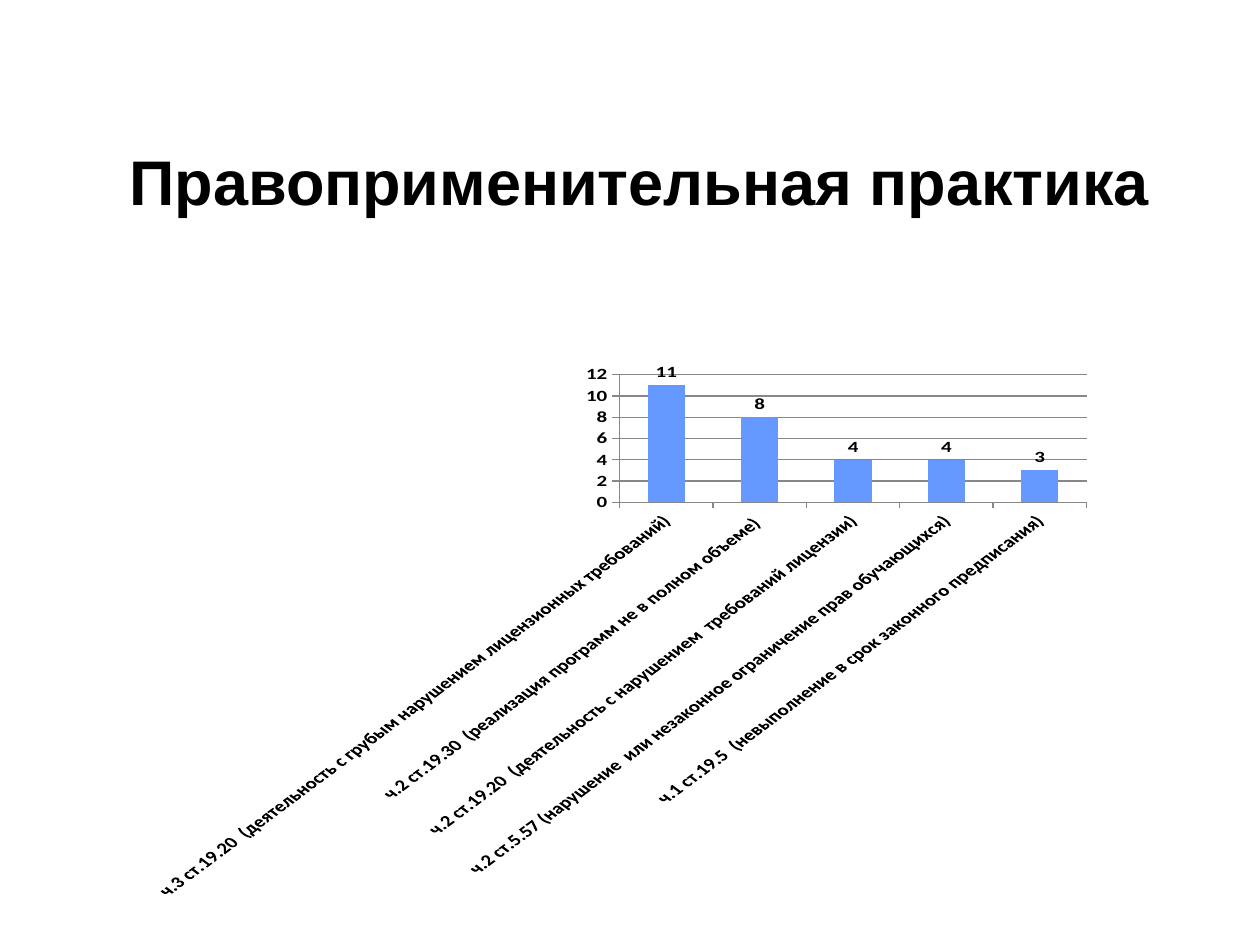
from pptx import Presentation
from pptx.chart.data import CategoryChartData
from pptx.dml.color import RGBColor
from pptx.enum.chart import XL_CHART_TYPE, XL_LABEL_POSITION, XL_TICK_MARK
from pptx.enum.text import MSO_ANCHOR, MSO_AUTO_SIZE, PP_ALIGN
from pptx.oxml.ns import qn
from pptx.util import Emu, Pt

PX = 914400 // 126
COLUMNS = XL_CHART_TYPE.COLUMN_CLUSTERED
OUTSIDE_END = XL_LABEL_POSITION.OUTSIDE_END
TICK_OUT, TICK_NONE = XL_TICK_MARK.OUTSIDE, XL_TICK_MARK.NONE
MIDDLE, CENTER, NO_FIT = MSO_ANCHOR.MIDDLE, PP_ALIGN.CENTER, MSO_AUTO_SIZE.NONE
BLACK, GRAY, BLUE = "000000", "878787", "6699FF"

VIOLATIONS = {
    "ч.3 ст.19.20  (деятельность с грубым нарушением лицензионных требований)": 11,
    "ч.2 ст.19.30  (реализация программ не в полном объеме) ": 8,
    "ч.2 ст.19.20  (деятельность с нарушением  требований лицензии)": 4,
    "ч.2 ст.5.57 (нарушение  или незаконное ограничение прав обучающихся)": 4,
    "ч.1 ст.19.5  (невыполнение в срок законного предписания)": 3,
}


def px(n):
    return Emu(n * PX)


def rgb(color):
    return RGBColor.from_string(color)


class Deck:
    """Holds the presentation, its current slide and the shared style."""

    def __init__(self):
        self.prs = Presentation()
        self.prs.slide_width, self.prs.slide_height = px(1260), px(945)
        self.s = self.prs.slides.add_slide(self.prs.slide_layouts[5])

    def font(self, f, name, size, bold=False):
        f.name, f.size, f.bold = name, Pt(size), bold
        f.color.rgb = rgb(BLACK)

    def title(self, text, x, y, w, h, bottom):
        sp = self.s.shapes.title
        sp.left, sp.top, sp.width, sp.height = map(px, (x, y, w, h))
        tf = sp.text_frame
        tf.text = text
        tf.word_wrap, tf.auto_size = True, NO_FIT
        tf.vertical_anchor, tf.margin_bottom = MIDDLE, px(bottom)
        p = tf.paragraphs[0]
        p.alignment = CENTER
        self.font(p.font, "Arial", 36, True)

    def axis(self, axis):
        axis.major_tick_mark, axis.minor_tick_mark = TICK_OUT, TICK_NONE
        axis.format.line.color.rgb = rgb(GRAY)
        self.font(axis.tick_labels.font, "Calibri", 12, True)

    def slant(self, axis, degrees):
        body = axis._element.find(qn("c:txPr")).find(qn("a:bodyPr"))
        body.set("rot", str(degrees * 60000))
        body.set("vert", "horz")

    def columns(self, data, x, y, w, h):
        cd = CategoryChartData()
        cd.categories = data.keys()
        cd.add_series("Series 1", data.values())
        chart = self.s.shapes.add_chart(COLUMNS, *map(px, (x, y, w, h)), cd).chart
        chart.has_legend = chart.has_title = False
        self.font(chart.font, "Calibri", 10)
        cat, val = chart.category_axis, chart.value_axis
        self.axis(cat)
        self.axis(val)
        self.slant(cat, -45)
        val.minimum_scale, val.maximum_scale, val.major_unit = 0, 12, 2
        val.has_major_gridlines = True
        val.major_gridlines.format.line.color.rgb = rgb(GRAY)
        plot = chart.plots[0]
        plot.gap_width, plot.vary_by_categories = 150, False
        fill = plot.series[0].format.fill
        fill.solid()
        fill.fore_color.rgb = rgb(BLUE)
        plot.has_data_labels = True
        labels = plot.data_labels
        labels.show_value, labels.position = True, OUTSIDE_END
        self.font(labels.font, "Calibri", 12, True)


def main():
    deck = Deck()
    deck.columns(VIOLATIONS, 134, 363, 972, 537)
    deck.title("Правоприменительная практика", 104, 125, 1071, 203, 99)
    deck.prs.save("out.pptx")


if __name__ == "__main__":
    main()
